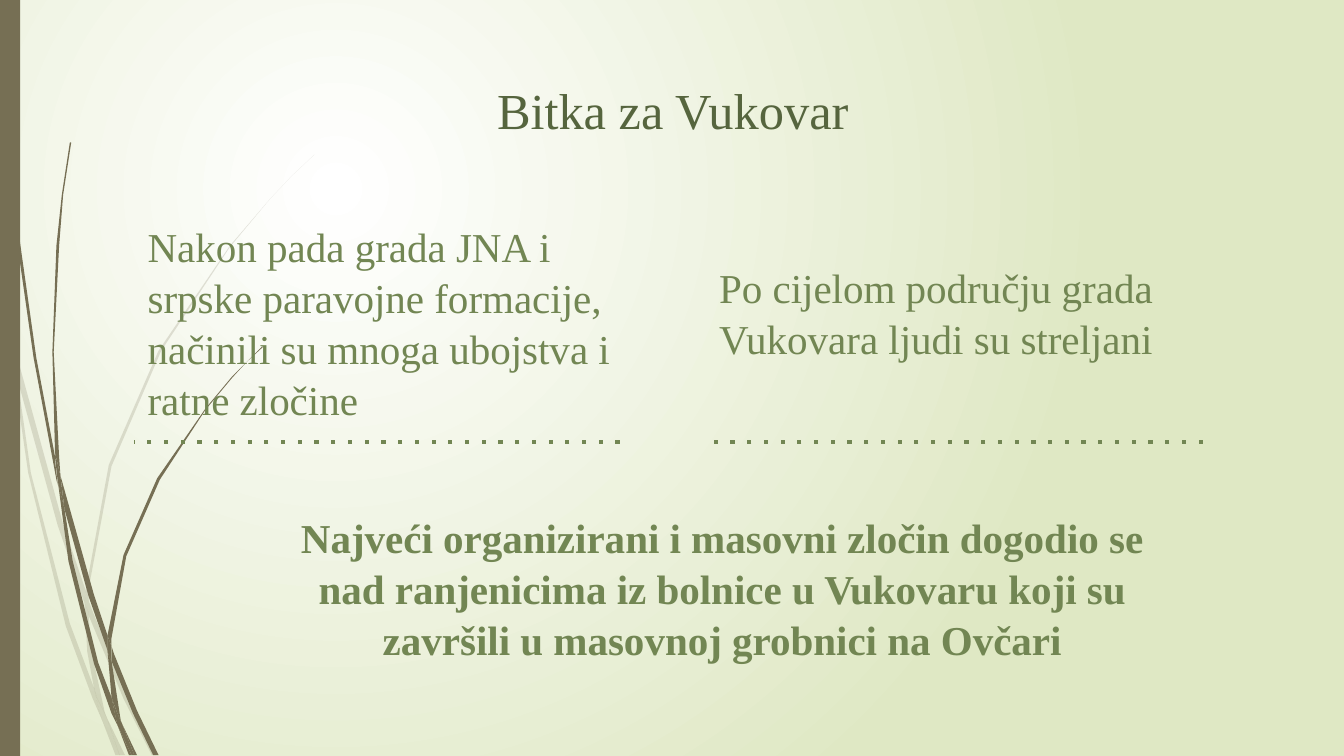
from lxml import etree
from pptx import Presentation
from pptx import util as u
from pptx.dml.color import RGBColor
from pptx.enum import shapes, text
from pptx.oxml.ns import qn

COLORS = {
    "stem": "766F54",
    "title": "56653E",
    "body": "728653",
    "light": "FFFFFF",
    "edge": "DFE8C4",
}
FONT = "Times New Roman"
SLIDE_SIZE = (25.4, 14.29)
BAR_WIDTH = 0.38
STEM_UNIT = 0.0254
INSET = 0.25

TITLE = {
    "text": "Bitka za Vukovar",
    "box": (2.01, 1.24, 21.41, 1.6),
    "size": 27, "color": "title", "bold": False, "center": True, "spacing": 1,
}
BODY = {"size": 22, "color": "body", "bold": False, "center": False, "spacing": 1.04}
BODIES = [
    {**BODY, "text": "Nakon pada grada JNA i srpske paravojne formacije, "
                     "načinili su mnoga ubojstva i ratne zločine",
     "box": (2.54, 3.89, 9.45, 4.47)},
    {**BODY, "text": "Po cijelom području grada Vukovara ljudi su streljani",
     "box": (13.34, 4.67, 10.64, 3.15)},
    {**BODY, "text": "Najveći organizirani i masovni zločin dogodio se nad "
                     "ranjenicima iz bolnice u Vukovaru koji su završili u "
                     "masovnoj grobnici na Ovčari",
     "box": (5.28, 9.4, 16.74, 4.04), "bold": True, "center": True},
]
RULE_Y = 8.36
RULES = [(11.71, 2.54), (22.73, 13.34)]

PALE_STEMS = [
    [(8, 263), (6, 241), (0, 211), (0, 224), (8, 258)],
    [(43, 391), (63, 449), (64, 440), (47, 390), (11, 259), (13, 282)],
    [(69, 455), (66, 447), (66, 458), (92, 520), (113, 562), (116, 562), (95, 519)],
    [(89, 562), (93, 562), (79, 533)],
    [(70, 512), (52, 464), (23, 352), (13, 282), (8, 263), (21, 352), (49, 466),
     (69, 520), (76, 536), (74, 530)],
    [(63, 449), (65, 485), (70, 512), (72, 519), (79, 533), (78, 530), (68, 484),
     (66, 458), (66, 456)],
    [(66, 438), (83, 347), (120, 261), (171, 184), (201, 148), (217, 131), (234, 115),
     (217, 131), (201, 148), (171, 183), (118, 261), (81, 346), (64, 438), (64, 440),
     (66, 447)],
    [(76, 536), (86, 562), (89, 562)],
    [(66, 456), (66, 458), (66, 447), (64, 440), (63, 449)],
    [(72, 519), (70, 512), (74, 530), (76, 536), (89, 562), (79, 533)],
]
DARK_STEMS = [
    [(5, 82), (12, 175), (25, 266), (42, 357), (43, 361), (41, 343), (41, 340),
     (27, 266), (14, 174), (6, 82), (3, 36), (3, 0), (2, 0), (3, 36)],
    [(66, 444), (80, 484), (80, 475), (80, 473), (70, 443), (45, 354), (48, 379)],
    [(85, 487), (83, 481), (83, 492), (99, 531), (114, 562), (118, 562), (102, 529)],
    [(83, 519), (73, 493), (54, 417), (48, 379), (43, 358), (51, 418), (70, 494),
     (83, 531), (88, 541), (87, 538)],
    [(45, 354), (44, 340), (40, 262), (44, 183), (47, 145), (53, 106), (52, 106),
     (46, 145), (42, 183), (39, 262), (41, 337)],
    [(100, 562), (102, 562), (91, 539)],
    [(43, 358), (48, 379), (45, 354), (41, 337), (41, 340)],
    [(83, 475), (94, 414), (119, 357), (153, 305), (173, 281), (184, 269), (196, 258),
     (195, 258), (184, 269), (173, 280), (153, 304), (117, 356), (92, 413), (80, 473),
     (83, 481)],
    [(88, 541), (96, 562), (98, 562)],
    [(80, 484), (83, 519), (87, 530), (91, 539), (90, 537), (83, 492), (81, 488)],
    [(80, 484), (81, 488), (83, 492), (83, 481), (80, 473), (80, 475)],
    [(87, 530), (83, 519), (87, 538), (88, 541), (98, 562), (100, 562), (91, 539)],
]


def rgb(name):
    return RGBColor.from_string(COLORS[name])


def paint_background(slide):
    fill = slide.background.fill
    fill.gradient()
    for stop, name in zip(fill.gradient_stops, ("light", "edge")):
        stop.color.rgb = rgb(name)
    gradient = slide._element.find(".//" + qn("a:gradFill"))
    direction = gradient.find(qn("a:lin"))
    circle = etree.Element(qn("a:path"), path="circle")
    etree.SubElement(circle, qn("a:fillToRect"), l="50000", t="50000", r="100000", b="100000")
    gradient.replace(direction, circle)


def paint_stem(shape, alpha=None):
    shape.shadow.inherit = False
    shape.fill.solid()
    shape.fill.fore_color.rgb = rgb("stem")
    shape.line.fill.background()
    if alpha:
        color = shape._element.spPr.find(".//" + qn("a:srgbClr"))
        etree.SubElement(color, qn("a:alpha"), val=str(alpha * 1000))


def add_decoration(slide):
    group = slide.shapes.add_group_shape()
    for stems, alpha in ((PALE_STEMS, 20), (DARK_STEMS, None)):
        for start, *points in stems:
            builder = group.shapes.build_freeform(*start, scale=float(u.Cm(STEM_UNIT)))
            builder.add_line_segments(points, close=True)
            paint_stem(builder.convert_to_shape(), alpha)
    bar = group.shapes.add_shape(
        shapes.MSO_SHAPE.RECTANGLE, 0, 0, u.Cm(BAR_WIDTH), u.Cm(SLIDE_SIZE[1]))
    paint_stem(bar)
    slide.shapes._spTree.insert(2, group._element)


def fill_placeholder(shape, content):
    shape.left, shape.top, shape.width, shape.height = map(u.Cm, content["box"])
    frame = shape.text_frame
    frame.word_wrap = True
    frame.auto_size = text.MSO_AUTO_SIZE.NONE
    frame.vertical_anchor = text.MSO_ANCHOR.TOP
    frame.margin_left = frame.margin_right = u.Cm(INSET)
    frame.margin_top = frame.margin_bottom = u.Cm(INSET)
    paragraph = frame.paragraphs[0]
    paragraph.alignment = text.PP_ALIGN.CENTER if content["center"] else text.PP_ALIGN.LEFT
    paragraph.line_spacing = content["spacing"]
    paragraph.space_before = u.Pt(0)
    properties = paragraph._p.get_or_add_pPr()
    properties.set("marL", "0")
    properties.set("indent", "0")
    etree.SubElement(properties, qn("a:buNone"))
    run = paragraph.add_run()
    run.text = content["text"]
    run.font.name = FONT
    run.font.size = u.Pt(content["size"])
    run.font.bold = content["bold"]
    run.font.color.rgb = rgb(content["color"])


def add_rule(slide, start, end):
    rule = slide.shapes.add_connector(
        shapes.MSO_CONNECTOR.STRAIGHT, u.Cm(start), u.Cm(RULE_Y), u.Cm(end), u.Cm(RULE_Y))
    rule.line.width = u.Pt(2.25)
    rule.line.color.rgb = rgb("body")
    properties = rule._element.spPr
    etree.SubElement(properties.find(qn("a:ln")), qn("a:prstDash"), val="dot")
    etree.SubElement(properties, qn("a:effectLst"))


def main():
    presentation = Presentation()
    presentation.slide_width, presentation.slide_height = map(u.Cm, SLIDE_SIZE)
    slide = presentation.slides.add_slide(presentation.slide_layouts[4])
    paint_background(slide)
    add_decoration(slide)
    title, *bodies, spare = slide.placeholders
    spare._element.getparent().remove(spare._element)
    for shape, content in zip([title, *bodies], [TITLE, *BODIES]):
        fill_placeholder(shape, content)
    for start, end in RULES:
        add_rule(slide, start, end)
    presentation.save("out.pptx")


if __name__ == "__main__":
    main()
